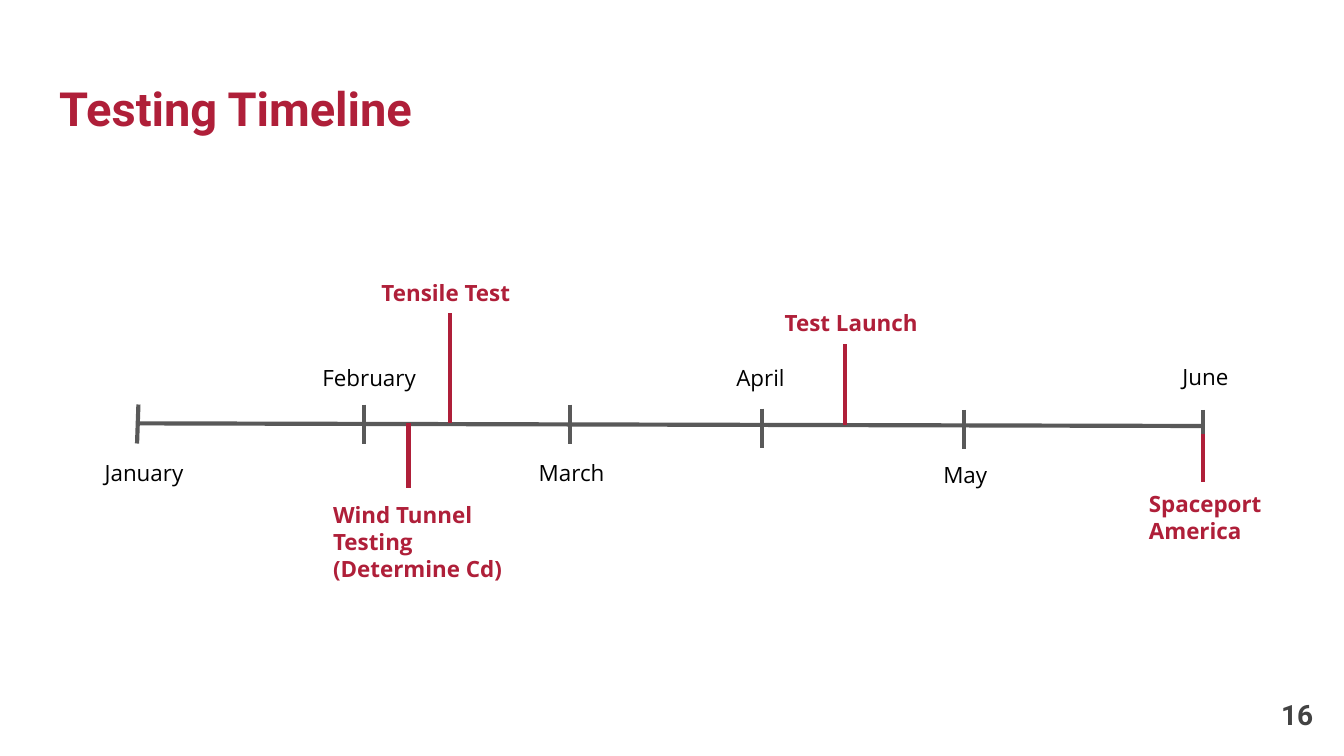
from lxml import etree
from pptx import Presentation
from pptx.dml.color import RGBColor
from pptx.enum.shapes import MSO_CONNECTOR
from pptx.enum.text import MSO_ANCHOR, MSO_AUTO_SIZE, PP_ALIGN
from pptx.oxml.ns import qn
from pptx.util import Inches, Pt

HEX = {"red": "AF1F39", "gray": "595959", "dark": "434343", "black": "000000"}

# name, tick x, tick top, lean, label x, label y, label width
MONTHS = [
    ("January", 0, 0, -0.01, -0.35, 0.31, 1.35),
    ("February", 1.68, 0, 0, 1.27, -0.4, 1.35),
    ("March", 3.21, 0, 0, 2.88, 0.31, 1.35),
    ("April", 4.64, 0.03, 0, 4.35, -0.4, 1.35),
    ("May", 6.14, 0.04, 0, 5.89, 0.32, 1.35),
    ("June", 7.92, 0.04, 0, 7.67, -0.41, 0.66),
]
# name, label box, stem start, stem end
EVENTS = [
    ("Tensile Test", (1.71, -1.03, 1.66, 0.63), (2.32, -0.68), (2.32, 0.14)),
    ("Spaceport America", (7.42, 0.54, 1.21, 0.71), (7.92, 0.22), (7.92, 0.58)),
    ("Test Launch", (4.71, -0.81, 1.35, 0.51), (5.26, -0.45), (5.26, 0.15)),
    ("Wind Tunnel Testing (Determine Cd)", (1.35, 0.62, 1.6, 0.98),
     (2.01, 0.14), (2.01, 0.62)),
]


def color(name):
    return RGBColor.from_string(HEX[name])


def write(shape, text, size, face, tone, bold=False,
          align=PP_ALIGN.LEFT, anchor=MSO_ANCHOR.TOP):
    frame = shape.text_frame
    frame.word_wrap = True
    frame.auto_size = MSO_AUTO_SIZE.NONE
    frame.vertical_anchor = anchor
    frame.margin_left = frame.margin_right = Inches(0.1)
    frame.margin_top = frame.margin_bottom = Inches(0.1)
    para = frame.paragraphs[0]
    para.alignment = align
    run = para.add_run()
    run.text = text
    run.font.size = Pt(size)
    run.font.name = face
    run.font.bold = bold
    run.font.color.rgb = color(tone)


def add_box(slide, box, *args, **style):
    shape = slide.shapes.add_textbox(*map(Inches, box))
    write(shape, *args, **style)


def add_line(slide, start, end, tone):
    line = slide.shapes.add_connector(
        MSO_CONNECTOR.STRAIGHT, *map(Inches, (*start, *end)))
    line.line.color.rgb = color(tone)
    line.line.width = Pt(2.25)
    etree.SubElement(line._element.spPr, qn("a:effectLst"))


def add_title(slide, box, text):
    title = slide.shapes.title
    title.left, title.top, title.width, title.height = map(Inches, box)
    write(title, text, 25.2, "Roboto", "red", bold=True)


def add_timeline(slide, left, top):
    """Draw axis, months and events from the top of the first tick."""
    def at(x, y):
        return left + x, top + y

    add_line(slide, at(0, 0.14), at(7.92, 0.16), "gray")
    for name, x, y, lean, label_x, label_y, width in MONTHS:
        add_box(slide, (*at(label_x, label_y), width, 0.43),
                name, 12, "Open Sans", "black")
        add_line(slide, at(x, y), at(x + lean, y + 0.29), "gray")
    for name, (x, y, width, height), start, end in EVENTS:
        add_box(slide, (*at(x, y), width, height),
                name, 12, "Open Sans", "red", bold=True)
        add_line(slide, at(*start), at(*end), "red")


def main():
    deck = Presentation()
    deck.slide_width = Inches(10)
    deck.slide_height = deck.slide_width * 9 // 16
    slide = deck.slides.add_slide(deck.slide_layouts[5])
    add_title(slide, (0.34, 0.49, 9.32, 0.63), "Testing Timeline")
    add_box(slide, (9.27, 5.1, 0.6, 0.43), "16", 15, "Roboto", "dark",
            bold=True, align=PP_ALIGN.RIGHT, anchor=MSO_ANCHOR.MIDDLE)
    add_timeline(slide, 1.03, 3.01)
    deck.save("out.pptx")


if __name__ == "__main__":
    main()
